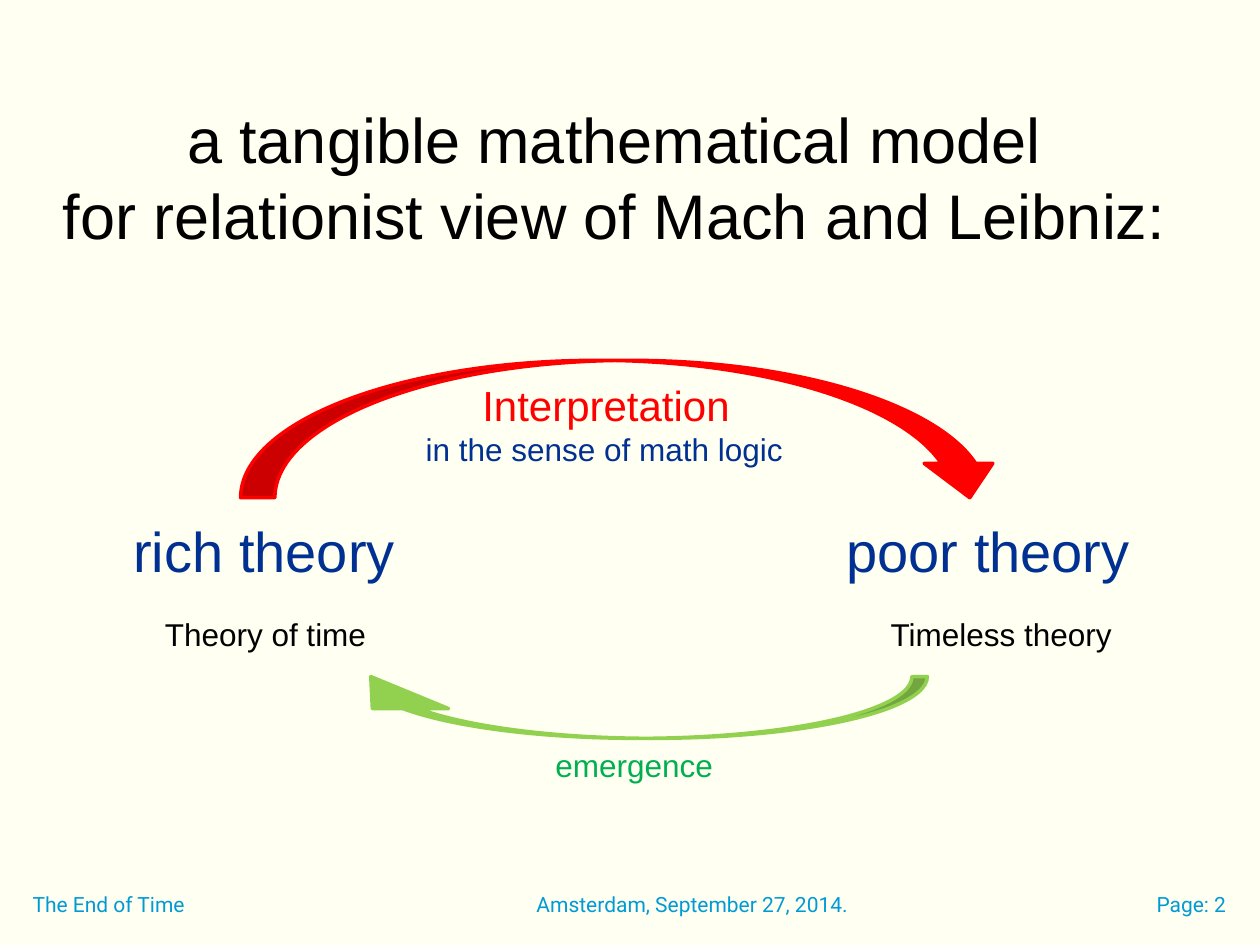
from collections import namedtuple

from pptx import Presentation
from pptx.dml.color import RGBColor
from pptx.enum.shapes import MSO_SHAPE
from pptx.enum.text import MSO_ANCHOR, MSO_AUTO_SIZE, PP_ALIGN
from pptx.util import Inches, Pt

LEFT, CENTER, RIGHT = PP_ALIGN.LEFT, PP_ALIGN.CENTER, PP_ALIGN.RIGHT
CURVED_ARROW = MSO_SHAPE.CURVED_DOWN_ARROW

IVORY = RGBColor(0xFF, 0xFF, 0xF2)
BLACK = RGBColor(0x00, 0x00, 0x00)
NAVY = RGBColor(0x00, 0x31, 0x92)
RED = RGBColor(0xFF, 0x00, 0x00)
LIME = RGBColor(0x92, 0xD0, 0x50)
GREEN = RGBColor(0x00, 0xB0, 0x50)
SKY = RGBColor(0x00, 0x9B, 0xD4)

SLIDE_W, SLIDE_H = Inches(10), Inches(7.5)
COLUMNS, ROWS = 100, 75  # square grid cells
CELL_W, CELL_H = SLIDE_W / COLUMNS, SLIDE_H / ROWS

Box = namedtuple("Box", "x y w h")


def inside(region, x, y, w, h):
    """Box offset from the region's top left corner, in grid cells."""
    return Box(region.x + x, region.y + y, w, h)


def emu(box):
    return (round(box.x * CELL_W), round(box.y * CELL_H),
            round(box.w * CELL_W), round(box.h * CELL_H))


def style(paragraph, size, color, align=LEFT, font="Arial"):
    paragraph.alignment = align
    paragraph.font.name = font
    paragraph.font.size = Pt(size)
    paragraph.font.color.rgb = color


def add_label(slide, box, lines, wrap=False):
    """Text box with one (text, *style) tuple per paragraph."""
    frame = slide.shapes.add_textbox(*emu(box)).text_frame
    frame.word_wrap = wrap
    frame.text = "\n".join(text for text, *_ in lines)
    for paragraph, (_, *look) in zip(frame.paragraphs, lines):
        style(paragraph, *look)


def add_curved_arrow(slide, box, color, rotation=0, adjustments=()):
    arrow = slide.shapes.add_shape(CURVED_ARROW, *emu(box))
    arrow.shadow.inherit = False
    arrow.rotation = rotation
    for index, value in enumerate(adjustments):
        arrow.adjustments[index] = value
    arrow.fill.solid()
    arrow.fill.fore_color.rgb = color
    arrow.line.color.rgb = color
    arrow.line.width = Pt(2)


def place_title(slide, region):
    title = slide.shapes.title
    title.left, title.top, title.width, title.height = emu(region)
    frame = title.text_frame
    frame.text = ("a tangible mathematical model\n"
                  "for relationist view of Mach and Leibniz:")
    frame.auto_size = MSO_AUTO_SIZE.NONE
    frame.vertical_anchor = MSO_ANCHOR.TOP
    for paragraph in frame.paragraphs:
        style(paragraph, 36, BLACK, CENTER)


def place_theory_cycle(slide, region):
    """Rich and poor theory, joined by interpretation and emergence."""
    theories = (
        ("rich theory", 0, 27.1, "Theory of time", 2.5, 18.1),
        ("poor theory", 56.6, 24.6, "Timeless theory", 60.1, 19.7),
    )
    for name, name_x, name_w, kind, kind_x, kind_w in theories:
        add_label(slide, inside(region, name_x, 11.9, name_w, 6.4),
                  [(name, 32, NAVY)], wrap=True)
        add_label(slide, inside(region, kind_x, 19.7, kind_w, 4),
                  [(kind, 18, BLACK)])

    add_curved_arrow(slide, inside(region, 9.5, 0, 60.6, 10.9), RED)
    add_label(slide, inside(region, 23.2, 1, 30.6, 8.1),
              [("Interpretation", 24, RED, CENTER),
               ("in the sense of math logic", 18, NAVY)])

    add_curved_arrow(slide, inside(region, 16.8, 25.1, 47.2, 4.9), LIME,
                     rotation=180, adjustments=(0.25, 1.234, 0.518))
    add_label(slide, inside(region, 33.5, 30.1, 15.2, 4),
              [("emergence", 18, GREEN)])


def place_footer(slide, region):
    for text, x, width, align in (
        ("The End of Time", 0, 39.1, LEFT),
        ("Amsterdam, September 27, 2014.", 40, 44.3, LEFT),
        ("Page: 2", 88.4, 8.3, RIGHT),
    ):
        add_label(slide, inside(region, x, 0, width, region.h),
                  [(text, 12, SKY, align, "Roboto")], wrap=True)


def main():
    deck = Presentation()
    deck.slide_width, deck.slide_height = SLIDE_W, SLIDE_H
    title_only = deck.slide_layouts[5]
    slide = deck.slides.add_slide(title_only)
    slide.background.fill.solid()
    slide.background.fill.fore_color.rgb = IVORY

    place_title(slide, Box(3.7, 7.5, 90.1, 19.2))
    place_theory_cycle(slide, Box(9.6, 28.6, 81.2, 34.1))
    place_footer(slide, Box(1.6, 70.3, 96.7, 3.2))
    deck.save("out.pptx")


if __name__ == "__main__":
    main()
